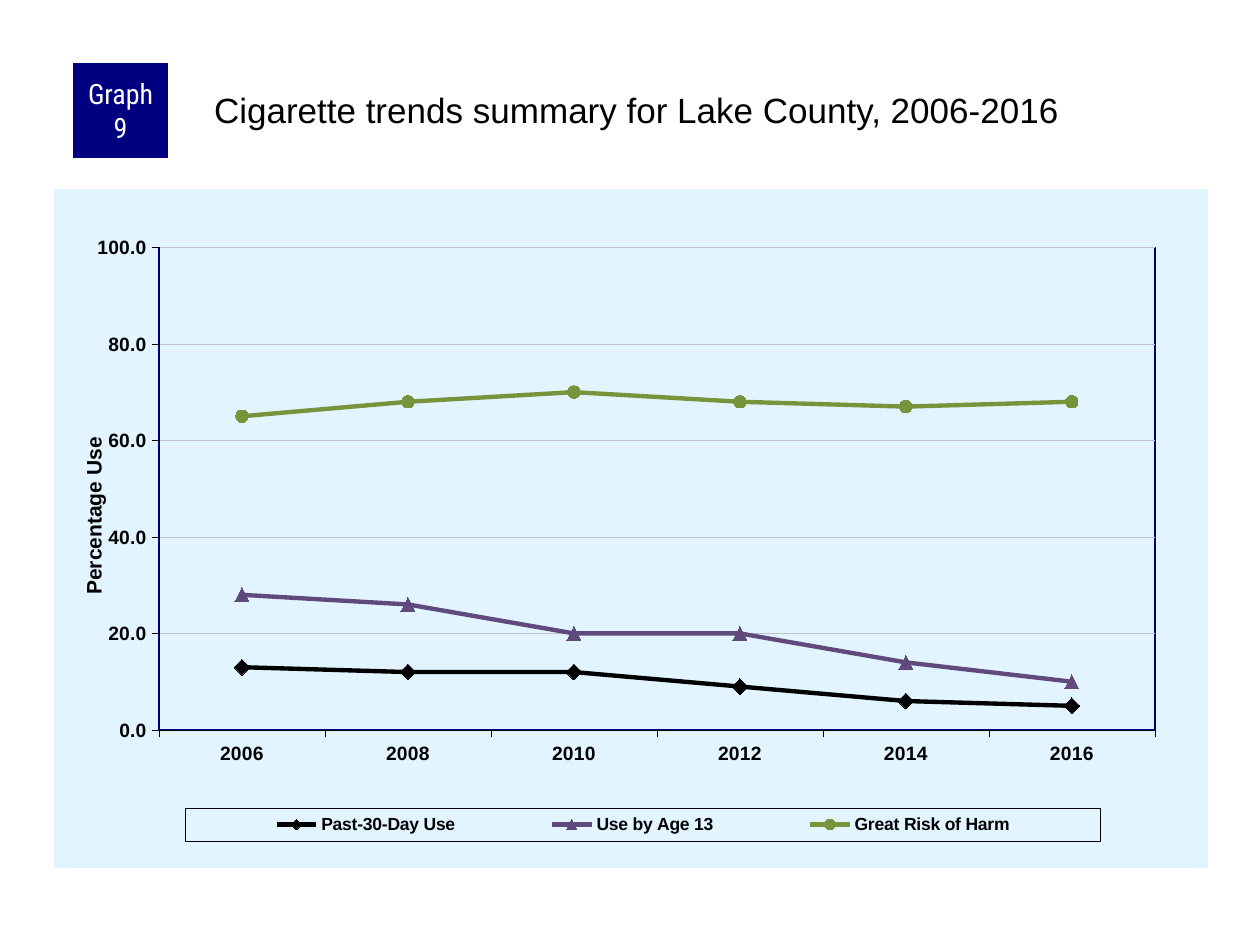
from lxml.etree import SubElement, fromstring
from pptx import Presentation
from pptx.chart.data import CategoryChartData
from pptx.dml.color import RGBColor
from pptx.enum.chart import XL_CHART_TYPE as ChartType, XL_LEGEND_POSITION as LegendPos
from pptx.enum.chart import XL_MARKER_STYLE as Marker, XL_TICK_MARK as Tick
from pptx.enum.shapes import MSO_SHAPE as Shape
from pptx.enum.text import MSO_ANCHOR as Anchor, PP_ALIGN as Align
from pptx.oxml.ns import nsdecls, qn
from pptx.util import Pt

PX = 914400 / 126
COLORS = {
    "navy": "000080", "white": "FFFFFF", "black": "000000", "panel": "E1F4FF",
    "grid": "C0C0C0", "purple": "604A7B", "green": "77933C",
}


def rgb(name):
    return RGBColor.from_string(COLORS[name])


def write(frame, text, size, color="black", font="Arial", bold=False, align=Align.LEFT):
    paragraph = frame.paragraphs[0]
    paragraph.alignment = align
    run = paragraph.add_run()
    run.text = text
    run.font.size = Pt(size)
    run.font.name = font
    run.font.bold = bold
    run.font.color.rgb = rgb(color)


deck = Presentation()
deck.slide_width, deck.slide_height = round(1260 * PX), round(945 * PX)
slide = deck.slides.add_slide(deck.slide_layouts[5])

badge = slide.shapes.add_shape(Shape.RECTANGLE, *(round(v * PX) for v in (73, 63, 95, 95)))
badge.shadow.inherit = False
badge.fill.solid()
badge.fill.fore_color.rgb = rgb("navy")
badge.line.fill.background()
badge_text = badge.text_frame
badge_text.word_wrap = True
badge_text.vertical_anchor = Anchor.MIDDLE
badge_text.margin_left = badge_text.margin_right = round(6 * PX)
badge_text.margin_top = badge_text.margin_bottom = 0
write(badge_text, "Graph 9", 16, color="white", font="Roboto Condensed", align=Align.CENTER)

headline = slide.shapes.title
headline.left, headline.top, headline.width, headline.height = (
    round(v * PX) for v in (210, 84, 998, 105))
headline_text = headline.text_frame
headline_text.word_wrap = True
headline_text.vertical_anchor = Anchor.TOP
headline_text.margin_left = headline_text.margin_top = round(4 * PX)
headline_text.margin_right = headline_text.margin_bottom = 0
write(headline_text, "Cigarette trends summary for Lake County, 2006-2016", 20)

trends = [
    ("Past-30-Day Use", (13, 12, 12, 9, 6, 5), "black", Marker.DIAMOND, 9),
    ("Use by Age 13", (28, 26, 20, 20, 14, 10), "purple", Marker.TRIANGLE, 8),
    ("Great Risk of Harm", (65, 68, 70, 68, 67, 68), "green", Marker.CIRCLE, 7),
]
data = CategoryChartData(number_format="0.0")
data.categories = [str(year) for year in range(2006, 2017, 2)]
for name, values, *_ in trends:
    data.add_series(name, values)
chart = slide.shapes.add_chart(
    ChartType.LINE_MARKERS, *(round(v * PX) for v in (54, 189, 1154, 679)), data).chart
chart.has_title = False
chart.font.size = Pt(8)
chart.font.name = "Arial"
chart.font.color.rgb = rgb("black")
chart.plots[0].vary_by_categories = False

for series, (_, _, color, marker, size) in zip(chart.plots[0].series, trends):
    series.smooth = False
    series.format.line.width = Pt(2.5)
    series.format.line.color.rgb = rgb(color)
    series.marker.style = marker
    series.marker.size = size
    series.marker.format.fill.solid()
    series.marker.format.fill.fore_color.rgb = rgb(color)
    series.marker.format.line.color.rgb = rgb(color)

years, percent = chart.category_axis, chart.value_axis
for axis in (years, percent):
    axis.major_tick_mark = Tick.OUTSIDE
    axis.minor_tick_mark = Tick.NONE
    axis.format.line.width = Pt(0.25)
    axis.format.line.color.rgb = rgb("black")
legend_key = chart
chart.has_legend = True
legend = chart.legend
legend.position = LegendPos.RIGHT
legend.include_in_layout = False
for font, size in ((years.tick_labels.font, 11), (percent.tick_labels.font, 11), (legend.font, 10)):
    font.size = Pt(size)
    font.name = "Arial"
    font.bold = True
    font.color.rgb = rgb("black")

percent.minimum_scale, percent.maximum_scale, percent.major_unit = 0, 100, 20
percent.tick_labels.number_format = "0.0"
percent.tick_labels.number_format_is_linked = False
percent.has_major_gridlines = True
percent.major_gridlines.format.line.width = Pt(0.25)
percent.major_gridlines.format.line.color.rgb = rgb("grid")
write(percent.axis_title.text_frame, "Percentage Use", 12, bold=True, align=Align.CENTER)

space = chart.element
plot_area = space.find(".//" + qn("c:plotArea"))
legend_box = space.find(".//" + qn("c:legend"))
percent_title = plot_area.find(".//" + qn("c:title"))

for part, place in (
    (plot_area, {"layoutTarget": "inner", "xMode": "edge", "yMode": "edge",
                 "x": 0.091, "y": 0.086, "w": 0.863, "h": 0.711}),
    (legend_box, {"xMode": "edge", "yMode": "edge", "x": 0.114, "y": 0.912, "w": 0.793, "h": 0.048}),
    (percent_title, {"xMode": "edge", "yMode": "edge", "x": 0.02, "y": 0.36}),
):
    for old in part.findall(qn("c:layout")):
        part.remove(old)
    layout = fromstring(f"<c:layout {nsdecls('c')}><c:manualLayout/></c:layout>")
    for key, value in place.items():
        SubElement(layout[0], qn("c:" + key)).set("val", str(value))
    overlay = part.find(qn("c:overlay"))
    part.insert(0 if overlay is None else part.index(overlay), layout)

no_fill = "<a:noFill/>"
panel_fill = f'<a:solidFill><a:srgbClr val="{COLORS["panel"]}"/></a:solidFill>'
for part, fill, border, width in (
    (space, panel_fill, None, 0),
    (plot_area, no_fill, "navy", 12700),
    (legend_box, no_fill, "black", 3175),
):
    stroke = f'<a:solidFill><a:srgbClr val="{COLORS[border]}"/></a:solidFill>' if border else no_fill
    style = fromstring(
        f'<c:spPr {nsdecls("c", "a")}>{fill}<a:ln w="{width}">{stroke}</a:ln></c:spPr>')
    text_style = part.find(qn("c:txPr"))
    part.insert(len(part) if text_style is None else part.index(text_style), style)

deck.save("out.pptx")
